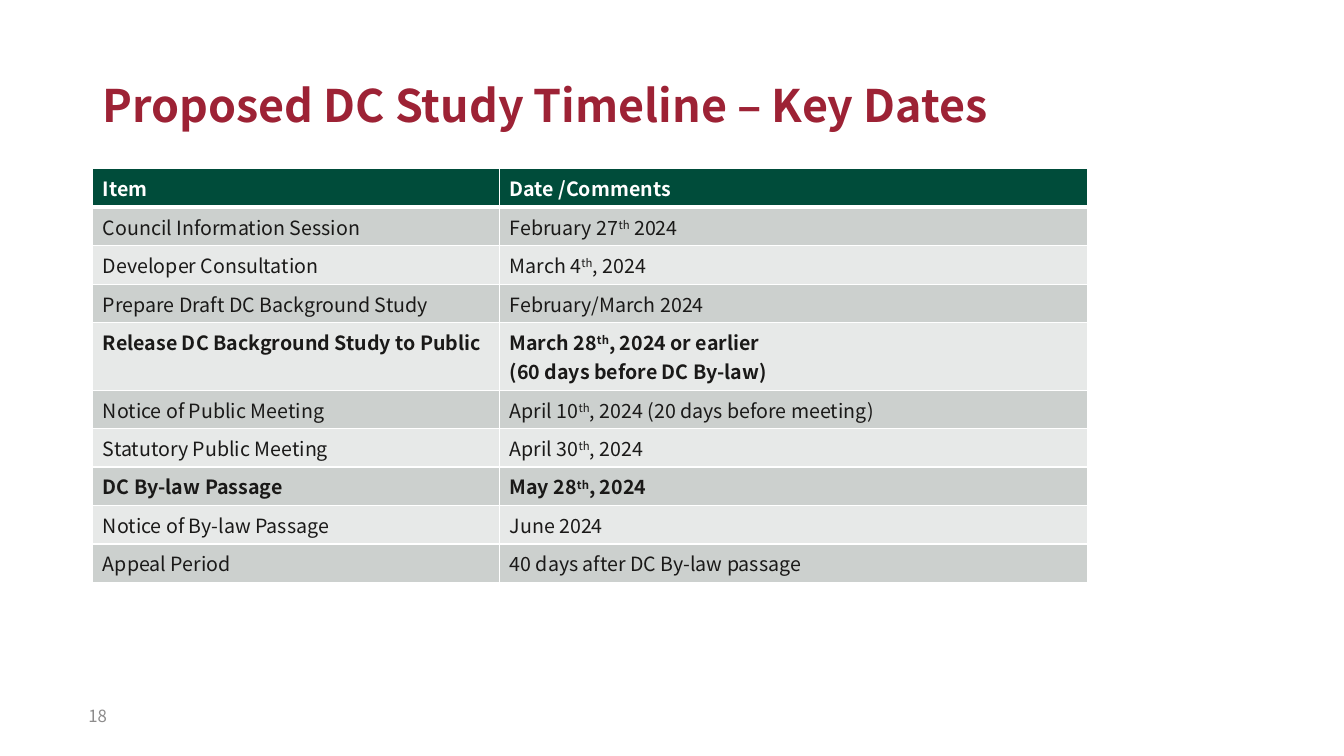
from lxml.etree import SubElement
from pptx import Presentation
from pptx.dml.color import RGBColor
from pptx.enum.text import MSO_ANCHOR as Anchor
from pptx.oxml.ns import qn
from pptx.util import Cm, Pt

FONT = "Noto Sans CJK JP"
COLORS = {
    "title": "9D2235",
    "number": "8D8C8C",
    "header": "004C3A",
    "text": "1A1918",
    "dark_band": "CCD0CE",
    "light_band": "E7E9E8",
    "white": "FFFFFF",
}


def write(frame, text, size=14, color="text", bold=False, anchor=None):
    """Fill a text frame; parts between ^ marks are superscript."""
    if anchor is not None:
        frame.word_wrap = True
        frame.vertical_anchor = anchor
    for row, line in enumerate(text.split("\n")):
        paragraph = frame.paragraphs[0] if row == 0 else frame.add_paragraph()
        for part, words in enumerate(line.split("^")):
            run = paragraph.add_run()
            run.text = words
            run.font.name = FONT
            run.font.size = Pt(size)
            run.font.bold = bold
            run.font.color.rgb = RGBColor.from_string(COLORS[color])
            if part % 2:
                run._r.get_or_add_rPr().set("baseline", "30000")


def add_borders(cell, bottom):
    properties = cell._tc.get_or_add_tcPr()
    for side, width in (("L", 1), ("R", 1), ("T", 1), ("B", bottom)):
        line = SubElement(properties, qn(f"a:ln{side}"), w=str(Pt(width)))
        fill = SubElement(line, qn("a:solidFill"))
        SubElement(fill, qn("a:srgbClr"), val=COLORS["white"])


prs = Presentation()
prs.slide_width, prs.slide_height = Cm(33.87), Cm(19.05)
slide = prs.slides.add_slide(prs.slide_layouts[6])

# Title
title = slide.shapes.add_textbox(Cm(2.34), Cm(1.02), Cm(29.21), Cm(3.22))
write(title.text_frame, "Proposed DC Study Timeline – Key Dates",
      size=32, color="title", bold=True, anchor=Anchor.MIDDLE)

# Key dates: item, date, bold
key_dates = [
    ("Item", "Date /Comments", True),
    ("Council Information Session", "February 27^th^ 2024", False),
    ("Developer Consultation", "March 4^th^, 2024", False),
    ("Prepare Draft DC Background Study", "February/March 2024", False),
    ("Release DC Background Study to Public",
     "March 28^th^, 2024 or earlier\n(60 days before DC By-law)", True),
    ("Notice of Public Meeting", "April 10^th^, 2024 (20 days before meeting)", False),
    ("Statutory Public Meeting", "April 30^th^, 2024", False),
    ("DC By-law Passage", "May 28^th^, 2024", True),
    ("Notice of By-law Passage", "June 2024", False),
    ("Appeal Period", "40 days after DC By-law passage", False),
]
timeline = slide.shapes.add_table(
    len(key_dates), 2, Cm(2.34), Cm(4.25), Cm(25.07), Cm(10.43)).table
timeline.columns[0].width = Cm(10.25)
timeline.columns[1].width = Cm(14.82)

for index, (item, date, bold) in enumerate(key_dates):
    timeline.rows[index].height = Cm(1.7 if "\n" in date else 0.97)
    is_header = index == 0
    band = "header" if is_header else "dark_band" if index % 2 else "light_band"
    for cell, text in zip(timeline.rows[index].cells, (item, date)):
        write(cell.text_frame, text, bold=bold,
              color="white" if is_header else "text")
        add_borders(cell, bottom=3 if is_header else 1)
        cell.fill.solid()
        cell.fill.fore_color.rgb = RGBColor.from_string(COLORS[band])

# Page number
page_number = slide.shapes.add_textbox(Cm(1.98), Cm(17.53), Cm(2.82), Cm(1.02))
write(page_number.text_frame, "18", size=12, color="number", anchor=Anchor.MIDDLE)

prs.save("out.pptx")
